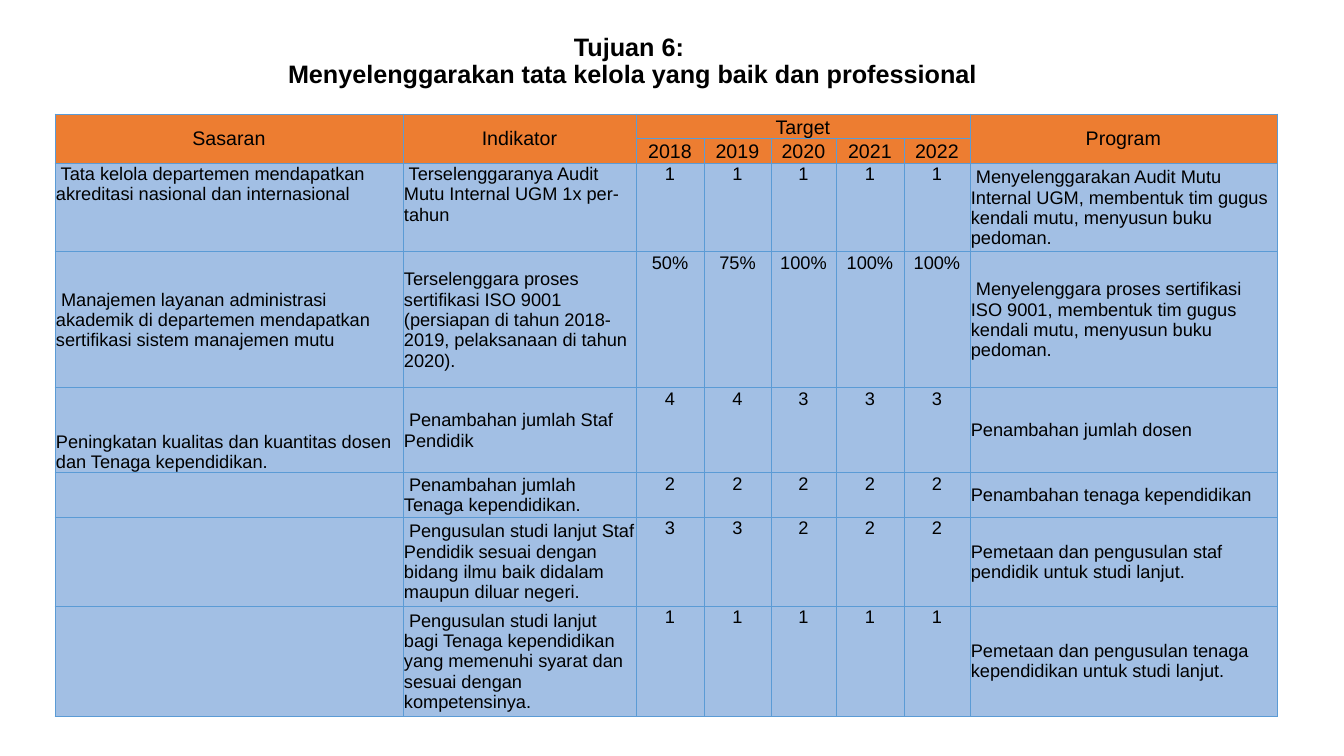
import pptx
import pptx.dml.color
import pptx.enum.text
import pptx.util
from lxml import etree

PX = 914400 / 100.8
BLACK = pptx.dml.color.RGBColor(0x00, 0x00, 0x00)
ORANGE = pptx.dml.color.RGBColor(0xED, 0x7D, 0x31)
LIGHT_BLUE = pptx.dml.color.RGBColor(0xA2, 0xBF, 0xE4)
BORDER_BLUE = pptx.dml.color.RGBColor(0x5B, 0x9B, 0xD5)
FONT = "Arial"

TOP = pptx.enum.text.MSO_ANCHOR.TOP
MIDDLE = pptx.enum.text.MSO_ANCHOR.MIDDLE
BOTTOM = pptx.enum.text.MSO_ANCHOR.BOTTOM
LEFT = pptx.enum.text.PP_ALIGN.LEFT
CENTER = pptx.enum.text.PP_ALIGN.CENTER

COLUMN_WIDTHS = [348, 233, 68, 67, 65, 68, 66, 307]
ROW_HEIGHTS = [23, 23, 85, 136, 85, 42, 85, 103]
FIRST_YEAR_COLUMN, PROGRAM_COLUMN = 2, 7
YEARS = ["2018", "2019", "2020", "2021", "2022"]

# Sasaran, its anchor, indikator, its anchor, yearly targets, program
GOALS = [
    (" Tata kelola departemen mendapatkan akreditasi nasional dan internasional", TOP,
     " Terselenggaranya Audit Mutu Internal UGM 1x per-tahun", TOP,
     ["1", "1", "1", "1", "1"],
     " Menyelenggarakan Audit Mutu Internal UGM, membentuk tim gugus kendali mutu, "
     "menyusun buku pedoman."),
    (" Manajemen layanan administrasi akademik di departemen mendapatkan "
     "sertifikasi sistem manajemen mutu", MIDDLE,
     "Terselenggara proses sertifikasi ISO 9001 (persiapan di tahun 2018-2019, "
     "pelaksanaan di tahun 2020).", MIDDLE,
     ["50%", "75%", "100%", "100%", "100%"],
     " Menyelenggara proses sertifikasi ISO 9001, membentuk tim gugus kendali mutu, "
     "menyusun buku pedoman."),
    ("Peningkatan kualitas dan kuantitas dosen dan Tenaga kependidikan.", BOTTOM,
     " Penambahan jumlah Staf Pendidik", MIDDLE,
     ["4", "4", "3", "3", "3"],
     "Penambahan jumlah dosen"),
    ("", TOP,
     " Penambahan jumlah Tenaga kependidikan.", MIDDLE,
     ["2", "2", "2", "2", "2"],
     "Penambahan tenaga kependidikan"),
    ("", TOP,
     " Pengusulan studi lanjut Staf Pendidik sesuai dengan bidang ilmu baik didalam "
     "maupun diluar negeri.", MIDDLE,
     ["3", "3", "2", "2", "2"],
     "Pemetaan dan pengusulan staf pendidik untuk studi lanjut."),
    ("", TOP,
     " Pengusulan studi lanjut bagi Tenaga kependidikan yang memenuhi syarat dan "
     "sesuai dengan kompetensinya.", MIDDLE,
     ["1", "1", "1", "1", "1"],
     "Pemetaan dan pengusulan tenaga kependidikan untuk studi lanjut."),
]


def px(length):
    return pptx.util.Emu(round(length * PX))


def write(text_frame, text, size, align, bold=False):
    paragraph = text_frame.paragraphs[0]
    paragraph.text = text
    paragraph.alignment = align
    for run in paragraph.runs:
        run.font.name = FONT
        run.font.size = pptx.util.Pt(size)
        run.font.bold = bold
        run.font.color.rgb = BLACK


def add_title(slide, text):
    title = slide.shapes.add_textbox(px(53), px(25), px(1159), px(73))
    title.text_frame.word_wrap = True
    title.text_frame.vertical_anchor = MIDDLE
    write(title.text_frame, text, 18, CENTER, bold=True)
    title.text_frame.paragraphs[0].line_spacing = 0.9


def style_cell(cell, fill):
    """Set insets, borders and fill; borders must precede the fill in the XML."""
    cell.margin_left = cell.margin_right = cell.margin_top = px(1)
    cell.margin_bottom = 0
    properties = cell._tc.get_or_add_tcPr()
    for side in ("lnL", "lnR", "lnT", "lnB"):
        line = etree.SubElement(properties, pptx.oxml.ns.qn(f"a:{side}"),
                                w=str(pptx.util.Pt(0.5)))
        line_fill = etree.SubElement(line, pptx.oxml.ns.qn("a:solidFill"))
        etree.SubElement(line_fill, pptx.oxml.ns.qn("a:srgbClr"), val=str(BORDER_BLUE))
    cell.fill.solid()
    cell.fill.fore_color.rgb = fill


def fill_cell(cell, text, size, align, anchor):
    cell.vertical_anchor = anchor
    write(cell.text_frame, text, size, align)


def add_goal_table(slide):
    table = slide.shapes.add_table(
        len(ROW_HEIGHTS), len(COLUMN_WIDTHS), px(55), px(114),
        px(sum(COLUMN_WIDTHS)), px(sum(ROW_HEIGHTS))).table
    table.first_row = table.horz_banding = False
    for column, width in zip(table.columns, COLUMN_WIDTHS):
        column.width = px(width)
    for index, (row, height) in enumerate(zip(table.rows, ROW_HEIGHTS)):
        row.height = px(height)
        for cell in row.cells:
            style_cell(cell, ORANGE if index < 2 else LIGHT_BLUE)
    return table


def fill_header(table):
    for column, heading in ((0, "Sasaran"), (1, "Indikator"), (PROGRAM_COLUMN, "Program")):
        table.cell(0, column).merge(table.cell(1, column))
        fill_cell(table.cell(0, column), heading, 14, CENTER, MIDDLE)
    target = table.cell(0, FIRST_YEAR_COLUMN)
    target.merge(table.cell(0, PROGRAM_COLUMN - 1))
    fill_cell(target, "Target", 14, CENTER, BOTTOM)
    for column, year in enumerate(YEARS, FIRST_YEAR_COLUMN):
        fill_cell(table.cell(1, column), year, 14, CENTER, BOTTOM)


def fill_goals(table):
    for row, goal in enumerate(GOALS, 2):
        sasaran, sasaran_anchor, indikator, indikator_anchor, targets, program = goal
        fill_cell(table.cell(row, 0), sasaran, 13, LEFT, sasaran_anchor)
        fill_cell(table.cell(row, 1), indikator, 13, LEFT, indikator_anchor)
        for column, target in enumerate(targets, FIRST_YEAR_COLUMN):
            fill_cell(table.cell(row, column), target, 13, CENTER, TOP)
        fill_cell(table.cell(row, PROGRAM_COLUMN), program, 13, LEFT, MIDDLE)


def main():
    presentation = pptx.Presentation()
    presentation.slide_width, presentation.slide_height = px(1344), px(756)
    slide = presentation.slides.add_slide(presentation.slide_layouts[6])
    add_title(slide, "Tujuan 6: \vMenyelenggarakan tata kelola yang baik dan professional")
    table = add_goal_table(slide)
    fill_header(table)
    fill_goals(table)
    presentation.save("out.pptx")


if __name__ == "__main__":
    main()
